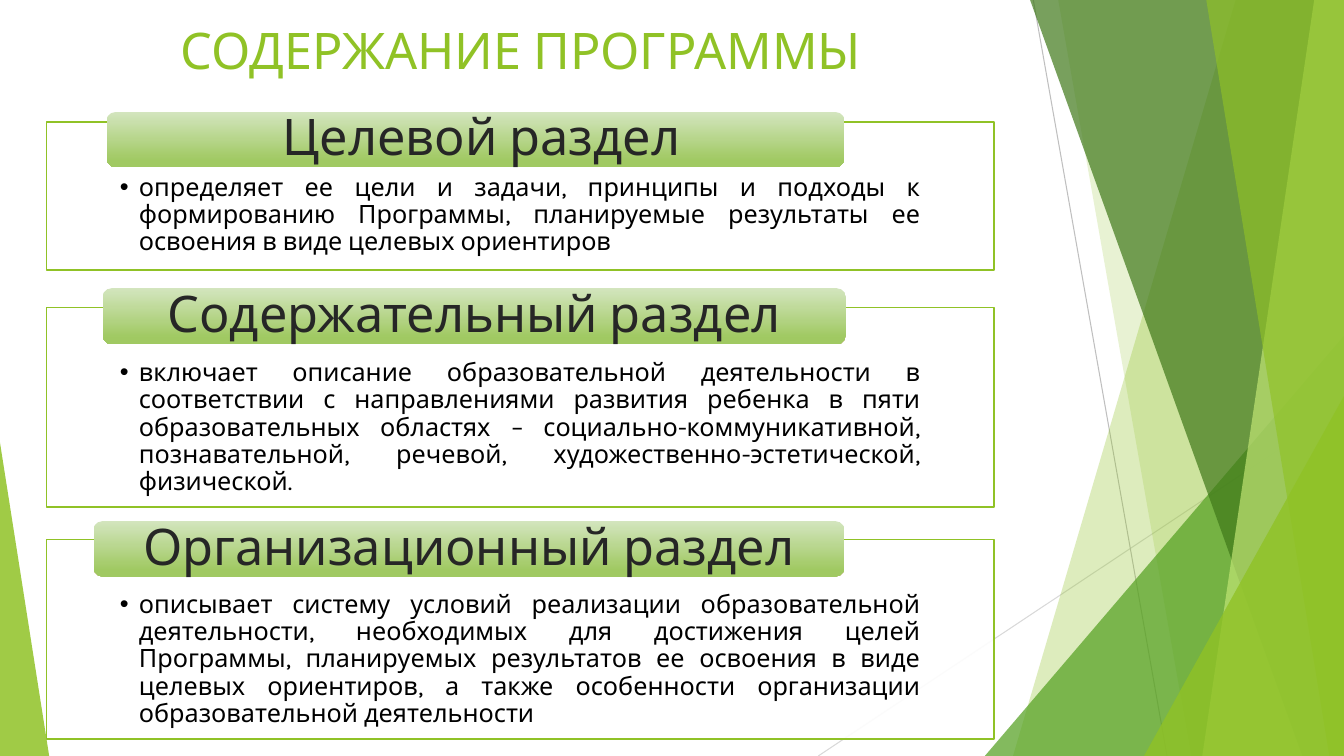
from dataclasses import dataclass

from lxml import etree
from pptx import Presentation
from pptx.dml.color import RGBColor
from pptx.enum.shapes import MSO_CONNECTOR, MSO_SHAPE
from pptx.enum.text import MSO_ANCHOR, MSO_AUTO_SIZE, PP_ALIGN
from pptx.oxml.ns import qn
from pptx.util import Cm, Pt

STRAIGHT = MSO_CONNECTOR.STRAIGHT
ROUNDED = MSO_SHAPE.ROUNDED_RECTANGLE
TOP, MIDDLE = MSO_ANCHOR.TOP, MSO_ANCHOR.MIDDLE
CENTER, JUSTIFY = PP_ALIGN.CENTER, PP_ALIGN.JUSTIFY
NO_AUTOFIT = MSO_AUTO_SIZE.NONE


@dataclass(frozen=True)
class Theme:
    font: str = "Karla"
    heading_size: int = 36
    body_size: int = 18
    lime: str = "90C226"
    green: str = "54A021"
    forest: str = "3F7819"
    pale_lime: str = "C0E474"
    white: str = "FFFFFF"
    black: str = "000000"
    charcoal: str = "262626"
    band_light: str = "D3E5BE"
    band_dark: str = "A0C962"
    line_light: str = "D9D9D9"
    line_dark: str = "BFBFBF"


THEME = Theme()
WIDTH, HEIGHT = 33.87, 19.05


def fill_translucent(shape, color, opacity):
    """Fill the shape with a colour at the given opacity in percent."""
    shape.fill.solid()
    shape.fill.fore_color.rgb = RGBColor.from_string(color)
    fill_color = shape._element.spPr.find(qn("a:solidFill")).find(qn("a:srgbClr"))
    etree.SubElement(fill_color, qn("a:alpha"), val=str(opacity * 1000))


def write_text(shape, text, size, color, align, anchor, insets, spacing=1.0):
    """Write one paragraph; insets are left, top, right, bottom in cm."""
    frame = shape.text_frame
    frame.auto_size = NO_AUTOFIT
    frame.word_wrap = True
    frame.vertical_anchor = anchor
    (frame.margin_left, frame.margin_top,
     frame.margin_right, frame.margin_bottom) = map(Cm, insets)
    paragraph = frame.paragraphs[0]
    paragraph.alignment = align
    paragraph.line_spacing = spacing
    paragraph.space_before = Pt(0)
    run = paragraph.add_run()
    run.text = text
    run.font.name = THEME.font
    run.font.size = Pt(size)
    run.font.bold = False
    run.font.color.rgb = RGBColor.from_string(color)
    return paragraph


prs = Presentation()
prs.slide_width, prs.slide_height = Cm(WIDTH), Cm(HEIGHT)
slide = prs.slides.add_slide(prs.slide_layouts.get_by_name("Comparison"))
shapes = slide.shapes

# Background rays and facets, from back to front
rays = [
    ((20.62, HEIGHT), (WIDTH, 10.24), THEME.line_light),
    ((26.04, 0), (29.41, HEIGHT), THEME.line_dark),
]
for start, end, color in rays:
    ray = shapes.add_connector(STRAIGHT, *map(Cm, start + end))
    ray.line.color.rgb = RGBColor.from_string(color)
    ray.line.width = Pt(0.75)
    etree.SubElement(ray._element.spPr, qn("a:effectLst"))

bottom_right, top_right = (WIDTH, HEIGHT), (WIDTH, 0)
facets = [
    ([(31.14, 0), (25.53, HEIGHT), bottom_right, top_right], THEME.lime, 30),
    ([(26.67, 0), (30.02, HEIGHT), bottom_right, top_right], THEME.lime, 20),
    ([(24.82, HEIGHT), (WIDTH, 8.46), bottom_right], THEME.green, 72),
    ([(25.96, 0), (32.82, HEIGHT), bottom_right, top_right], THEME.forest, 70),
    ([(33.12, 0), (30.3, HEIGHT), bottom_right, top_right], THEME.pale_lime, 70),
    ([(30.4, 0), (33.5, HEIGHT), bottom_right, top_right], THEME.lime, 65),
    ([(28.83, HEIGHT), (WIDTH, 9.98), bottom_right], THEME.lime, 80),
    ([(0, 11.15), (1.24, HEIGHT), (0, HEIGHT)], THEME.lime, 85),
]
for corners, color, opacity in facets:
    first, *others = [(Cm(x), Cm(y)) for x, y in corners]
    builder = shapes.build_freeform(*first)
    builder.add_line_segments(others, close=True)
    facet = builder.convert_to_shape()
    facet.shadow.inherit = False
    facet.line.fill.background()
    fill_translucent(facet, color, opacity)

title = shapes.title
title.left, title.top, title.width, title.height = map(Cm, (1.19, 0.36, 23.88, 3.66))
write_text(title, "СОДЕРЖАНИЕ ПРОГРАММЫ", THEME.heading_size, THEME.lime,
           CENTER, TOP, (0.25, 0.13, 0.25, 0.13))

# Sections: heading, its box, description, panel top and height
sections = [
    (" Целевой раздел", (2.69, 2.82, 18.59, 1.4),
     "определяет ее цели и задачи, принципы и подходы к формированию Программы, "
     "планируемые результаты ее освоения в виде целевых ориентиров", 3.07, 3.73),
    ("Содержательный раздел", (2.59, 7.26, 18.72, 1.42),
     "включает описание образовательной деятельности в соответствии с направлениями "
     "развития ребенка в пяти образовательных областях – социально-коммуникативной, "
     "познавательной, речевой, художественно-эстетической, физической.", 7.75, 5.03),
    ("Организационный раздел", (2.36, 13.13, 18.92, 1.4),
     "описывает систему условий реализации образовательной деятельности, необходимых "
     "для достижения целей Программы, планируемых результатов ее освоения в виде "
     "целевых ориентиров, а также особенности организации образовательной "
     "деятельности", 13.59, 5.03),
]
_, *panels, spare = list(slide.placeholders)
spare._element.getparent().remove(spare._element)

for panel, (heading, band_box, description, top, height) in zip(panels, sections):
    # Bring the panel in front of the facets
    shapes._spTree.append(panel._element)
    panel.left, panel.top, panel.width, panel.height = map(Cm, (1.17, top, 23.88, height))
    fill_translucent(panel, THEME.white, 90)
    panel.line.color.rgb = RGBColor.from_string(THEME.lime)
    panel.line.width = Pt(1)
    item = write_text(panel, description, THEME.body_size, THEME.black,
                      JUSTIFY, TOP, (1.85, 1.32, 1.85, 0.36), 0.9)
    bullet = item._p.get_or_add_pPr()
    bullet.set("marL", str(Cm(0.48)))
    bullet.set("indent", str(Cm(-0.48)))
    etree.SubElement(bullet, qn("a:buFont"), typeface="Arial")
    etree.SubElement(bullet, qn("a:buChar"), char="•")

    band = shapes.add_shape(ROUNDED, *map(Cm, band_box))
    band.shadow.inherit = False
    band.line.fill.background()
    band.fill.gradient()
    band.fill.gradient_angle = 270
    stops = [(0, THEME.band_light), (0.88, THEME.band_dark)]
    for stop, (position, color) in zip(band.fill.gradient_stops, stops):
        stop.position = position
        stop.color.rgb = RGBColor.from_string(color)
    write_text(band, heading, THEME.heading_size, THEME.charcoal,
               CENTER, MIDDLE, (0.71, 0, 0.71, 0), 0.9)

prs.save("out.pptx")
